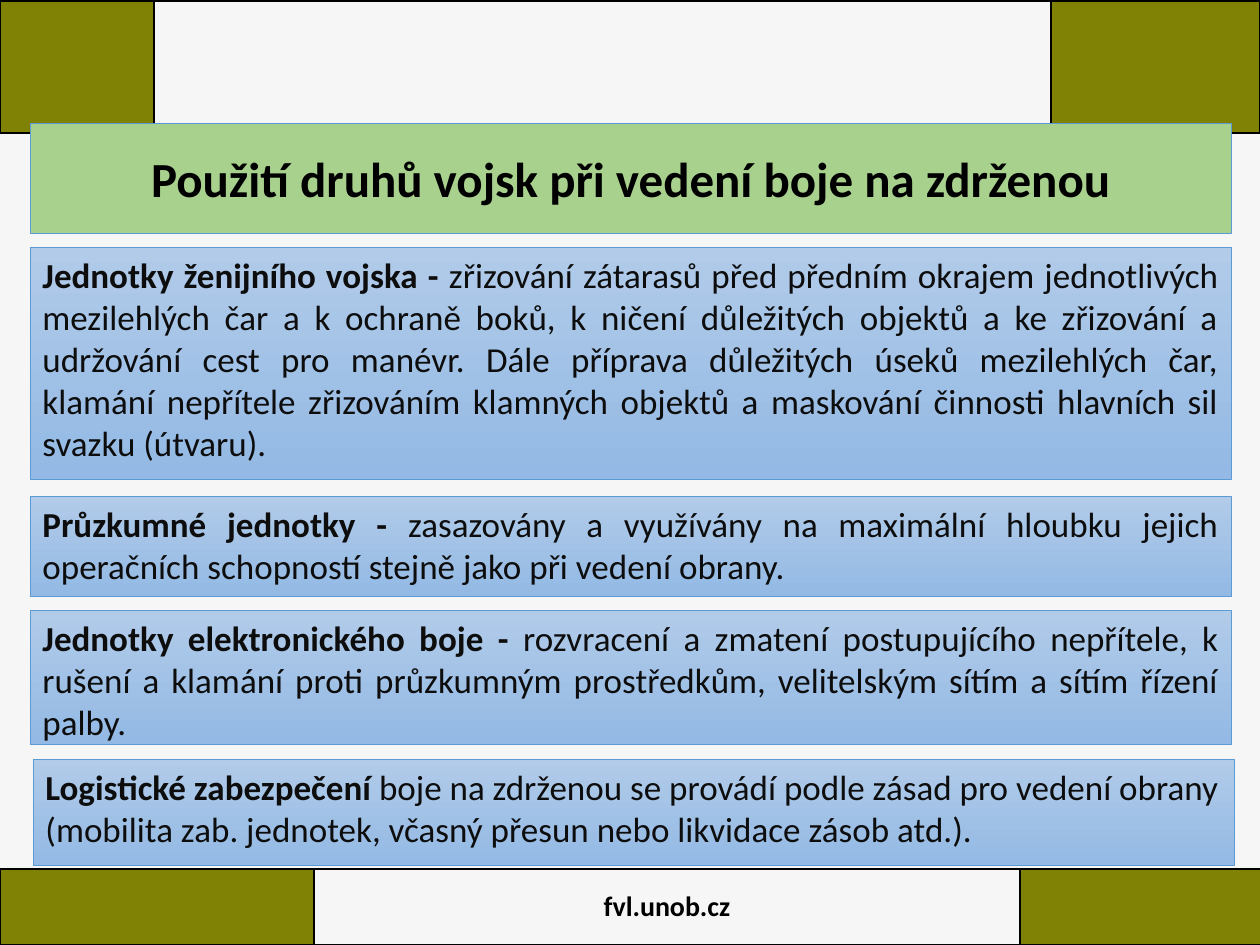
"""Build the slide on the use of service branches in delaying combat."""
from dataclasses import dataclass

from lxml import etree
from pptx import Presentation
from pptx.dml.color import RGBColor
from pptx.enum.shapes import MSO_SHAPE
from pptx.enum.text import MSO_ANCHOR, PP_ALIGN
from pptx.oxml.ns import qn
from pptx.util import Emu, Pt

RECT = MSO_SHAPE.RECTANGLE
TOP, MIDDLE = MSO_ANCHOR.TOP, MSO_ANCHOR.MIDDLE
LEFT, CENTER, JUSTIFY = PP_ALIGN.LEFT, PP_ALIGN.CENTER, PP_ALIGN.JUSTIFY

PAPER = RGBColor(0xF6, 0xF6, 0xF6)
OLIVE = RGBColor(0x80, 0x82, 0x06)
GREEN = RGBColor(0xA9, 0xD1, 0x8E)
LIGHT = RGBColor(0xB1, 0xCB, 0xE9)
DEEP = RGBColor(0x93, 0xB9, 0xE4)
EDGE = RGBColor(0x5B, 0x9B, 0xD5)
BLACK = RGBColor(0, 0, 0)
INK = RGBColor(0x0D, 0x0D, 0x0D)

FONT = "Calibri"
SCALE = 914400 / 126
WIDE = 1201


@dataclass
class Band:
    top: int
    height: int
    cols: tuple[int, ...]
    text: str = ""


@dataclass
class Panel:
    left: int
    top: int
    height: int
    head: str
    body: str
    align: PP_ALIGN = JUSTIFY


BANDS = (
    Band(869, 76, (314, 706, 242), "fvl.unob.cz"),
    Band(1, 132, (154, 897, 209)),
)

PANELS = (
    Panel(30, 247, 232, "Jednotky ženijního vojska - ",
          "zřizování zátarasů před předním okrajem jednotlivých mezilehlých čar "
          "a k ochraně boků, k ničení důležitých objektů a ke zřizování a "
          "udržování cest pro manévr. Dále příprava důležitých úseků "
          "mezilehlých čar, klamání nepřítele zřizováním klamných objektů a "
          "maskování činnosti hlavních sil svazku (útvaru)."),
    Panel(30, 496, 101, "Průzkumné jednotky - ",
          "zasazovány a využívány na maximální hloubku jejich operačních "
          "schopností stejně jako při vedení obrany."),
    Panel(30, 610, 135, "Jednotky elektronického boje - ",
          "rozvracení a zmatení postupujícího nepřítele, k rušení a klamání "
          "proti průzkumným prostředkům, velitelským sítím a sítím řízení palby."),
    Panel(33, 759, 107, "Logistické zabezpečení ",
          "boje na zdrženou se provádí podle zásad pro vedení obrany (mobilita "
          "zab. jednotek, včasný přesun nebo likvidace zásob atd.).", LEFT),
)


def px(count: int) -> Emu:
    """Turn pixels into EMU."""
    return Emu(round(count * SCALE))


def add_run(para, text: str, size: int, color: RGBColor, bold: bool) -> None:
    """Add one styled run."""
    run = para.add_run()
    run.text = text
    font = run.font
    font.name, font.size, font.bold = FONT, Pt(size), bold
    font.color.rgb = color


def add_edges(cell) -> None:
    """Give a cell thin black borders."""
    props = cell._tc.get_or_add_tcPr()
    for spot, side in enumerate(("lnL", "lnR", "lnT", "lnB")):
        line = etree.Element(qn(f"a:{side}"), w=str(Pt(1)))
        fill = etree.SubElement(line, qn("a:solidFill"))
        etree.SubElement(fill, qn("a:srgbClr"), val=str(BLACK))
        props.insert(spot, line)


def add_band(slide, band: Band) -> None:
    """Draw a one-row table with olive ends."""
    frame = slide.shapes.add_table(1, len(band.cols), 0, px(band.top),
                                   px(sum(band.cols)), px(band.height))
    table = frame.table
    table.first_row = table.horz_banding = False
    for spot, width in enumerate(band.cols):
        table.columns[spot].width = px(width)
        cell = table.cell(0, spot)
        if spot == 1:
            cell.fill.background()
        else:
            cell.fill.solid()
            cell.fill.fore_color.rgb = OLIVE
        add_edges(cell)
    if band.text:
        cell = table.cell(0, 1)
        cell.vertical_anchor = MIDDLE
        para = cell.text_frame.paragraphs[0]
        para.alignment = CENTER
        add_run(para, band.text, 16, BLACK, True)


def add_box(slide, left: int, top: int, height: int,
            align: PP_ALIGN, anchor: MSO_ANCHOR):
    """Draw an outlined box and return it with its paragraph."""
    box = slide.shapes.add_shape(RECT, px(left), px(top), px(WIDE), px(height))
    box.shadow.inherit = False
    box.line.color.rgb = EDGE
    box.line.width = Pt(0.5)
    frame = box.text_frame
    frame.word_wrap = True
    frame.vertical_anchor = anchor
    para = frame.paragraphs[0]
    para.alignment = align
    return box, para


def add_panel(slide, panel: Panel) -> None:
    """Draw a shaded box with a bold lead."""
    box, para = add_box(slide, panel.left, panel.top, panel.height,
                        panel.align, TOP)
    box.fill.gradient()
    box.fill.gradient_angle = 270
    for stop, color in zip(box.fill.gradient_stops, (LIGHT, DEEP)):
        stop.color.rgb = color
    add_run(para, panel.head, 20, INK, True)
    add_run(para, panel.body, 20, INK, False)


def add_title(slide, text: str) -> None:
    """Draw the green title box."""
    box, para = add_box(slide, 30, 123, 110, CENTER, MIDDLE)
    box.fill.solid()
    box.fill.fore_color.rgb = GREEN
    add_run(para, text, 28, BLACK, True)


def main() -> None:
    """Build and save the slide."""
    deck = Presentation()
    deck.slide_width, deck.slide_height = px(1260), px(945)
    slide = deck.slides.add_slide(deck.slide_layouts[6])
    slide.background.fill.solid()
    slide.background.fill.fore_color.rgb = PAPER
    for band in BANDS:
        add_band(slide, band)
    for panel in PANELS:
        add_panel(slide, panel)
    add_title(slide, "Použití druhů vojsk při vedení boje na zdrženou")
    deck.save("out.pptx")


if __name__ == "__main__":
    main()
